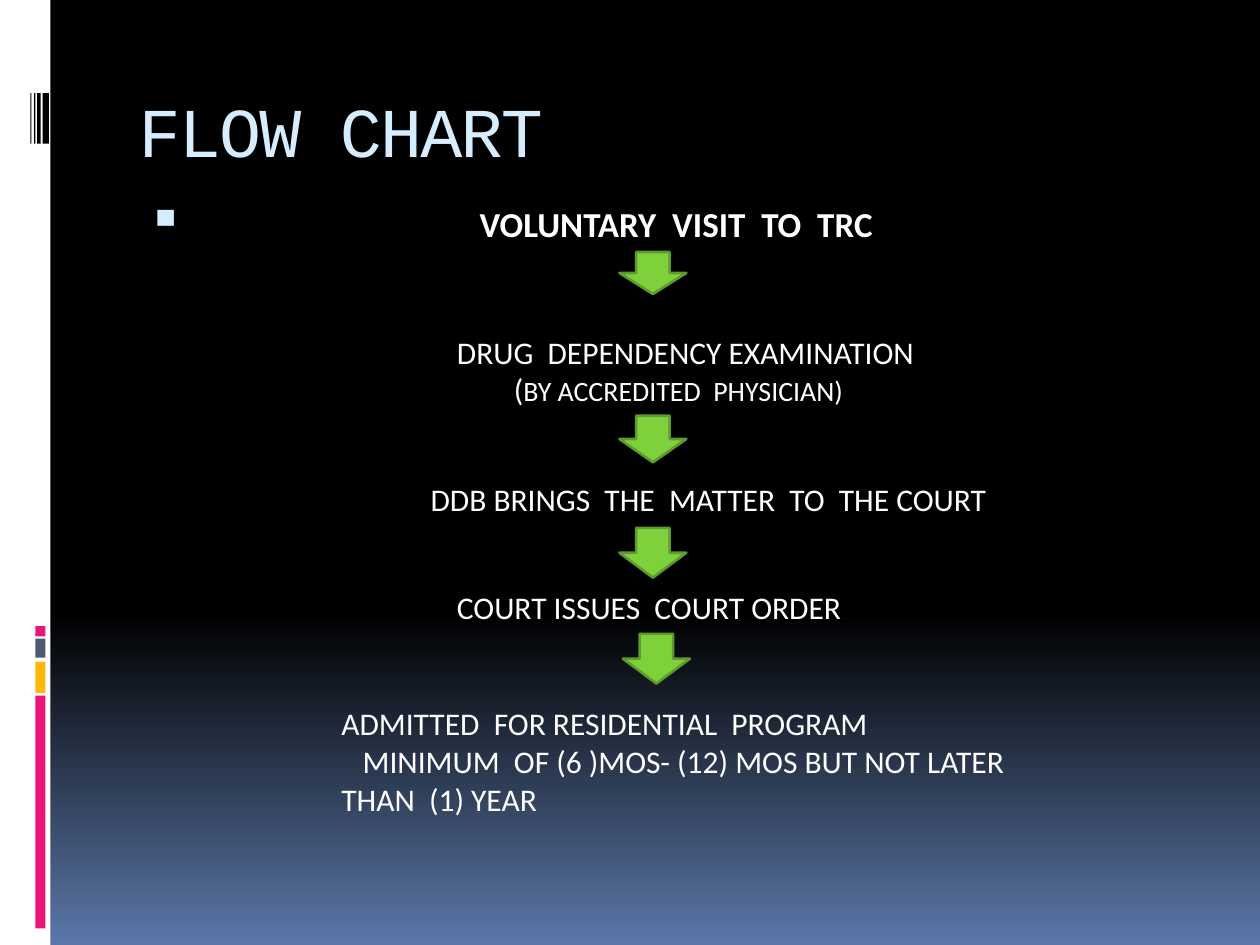
from lxml.etree import SubElement
from pptx import Presentation
from pptx.dml.color import RGBColor
from pptx.enum.shapes import MSO_SHAPE as Shape
from pptx.enum.text import MSO_ANCHOR as Anchor, PP_ALIGN as Align
from pptx.oxml.ns import qn
from pptx.util import Pt

THEME = {
    "white": "FFFFFF", "black": "000000", "sky": "D6ECFF", "blue": "5B77A8",
    "pink": "EA157A", "amber": "FEB80A", "slate": "4E5B6F",
    "green": "7FD13B", "dark_green": "5E9B2C",
    "title_font": "Courier New", "body_font": "Calibri",
    "title": 40, "lead": 20, "step": 18, "note": 16,
}
TITLE = "FLOW CHART"
LEAD = "VOLUNTARY  VISIT  TO  TRC"
STEPS = [
    ((254, 186.5, 300, 51), [
        (0, [("DRUG  DEPENDENCY EXAMINATION", "step")]),
        (32.5, [("(", "step"), ("BY ACCREDITED  PHYSICIAN)", "note")])]),
    ((239, 270.7, 353, 29), [
        (0, [("DDB BRINGS  THE  MATTER  TO  THE COURT", "step")])]),
    ((254, 332.6, 256, 29), [
        (0, [("COURT ISSUES  COURT ORDER", "step")])]),
    ((188, 398.9, 413, 73), [
        (0, [("ADMITTED  FOR RESIDENTIAL  PROGRAM", "step")]),
        (12.2, [("MINIMUM  OF (6 )MOS- (12) MOS BUT NOT LATER", "step")]),
        (0, [("THAN  (1) YEAR", "step")])]),
]
ARROWS = [(354, 144, 24), (354, 237.6, 26.6), (354, 301.7, 28.4), (356, 362.2, 28.4)]
ARROW_WIDTH = 38.2
SIDE_BAR = (0, 0, 28.8, 540)
COLOUR_BLOCKS = [("pink", 397.5, 133), ("amber", 378, 18), ("slate", 365, 10.8), ("pink", 357.8, 5.8)]
BARCODE = [(24.3, 3.6), (21.2, 2), (19.5, 0.8), (17.4, 0.6)]


def colour(name):
    return RGBColor.from_string(THEME[name])


def add_shape(slide, kind, area, fill, line=None):
    shape = slide.shapes.add_shape(kind, *map(Pt, area))
    shape.shadow.inherit = False
    shape.fill.solid()
    shape.fill.fore_color.rgb = colour(fill)
    if line:
        shape.line.color.rgb = colour(line)
        shape.line.width = Pt(1.5)
    else:
        shape.line.fill.background()
    return shape


def write(para, text, size="step", font="body_font", ink="white", bold=False):
    span = para.add_run()
    span.text = text
    span.font.size = Pt(THEME[size])
    span.font.name = THEME[font]
    span.font.color.rgb = colour(ink)
    span.font.bold = bold
    return span


def add_box(slide, area):
    box = slide.shapes.add_textbox(*map(Pt, area))
    box.text_frame.word_wrap = True
    return box.text_frame


def set_bullet(para, mark, ink, percent, margin, hanging):
    props = para._p.get_or_add_pPr()
    props.set("marL", str(Pt(margin)))
    props.set("indent", str(-Pt(hanging)))
    SubElement(SubElement(props, qn("a:buClr")), qn("a:srgbClr"), val=THEME[ink])
    SubElement(props, qn("a:buSzPct"), val=str(percent * 1000))
    SubElement(props, qn("a:buChar"), char=mark)


def paint_backdrop(slide):
    fill = slide.background.fill
    fill.gradient()
    fill.gradient_angle = 270
    for stop, (name, position) in zip(fill.gradient_stops, [("black", 0.65), ("blue", 1)]):
        stop.color.rgb = colour(name)
        stop.position = position
    add_shape(slide, Shape.RECTANGLE, SIDE_BAR, "white")
    for name, top, height in COLOUR_BLOCKS:
        add_shape(slide, Shape.RECTANGLE, (20.2, top, 5.8, height), name)
    for left, width in BARCODE:
        add_shape(slide, Shape.RECTANGLE, (left, 53.3, width, 28.8), "black")


def place_title(slide):
    title = slide.shapes.title
    title.left, title.top, title.width, title.height = map(Pt, (72, 40.3, 612, 72))
    frame = title.text_frame
    frame.vertical_anchor = Anchor.MIDDLE
    frame.margin_bottom = Pt(8.6)
    para = frame.paragraphs[0]
    para.alignment = Align.LEFT
    span = write(para, TITLE, size="title", font="title_font", ink="sky")
    span.font._element.set("spc", "-100")


def place_flow(slide):
    frame = add_box(slide, (72, 102.2, 612, 360))
    frame.margin_top = Pt(13.6)
    para = frame.paragraphs[0]
    set_bullet(para, "▪", "sky", 142, margin=195, hanging=190)
    write(para, LEAD, size="lead", bold=True)
    for arrow, (area, lines) in zip(ARROWS, STEPS):
        left, top, height = arrow
        add_shape(slide, Shape.DOWN_ARROW, (left, top, ARROW_WIDTH, height), "green", "dark_green")
        frame = add_box(slide, area)
        for number, (indent, spans) in enumerate(lines):
            para = frame.add_paragraph() if number else frame.paragraphs[0]
            para._p.get_or_add_pPr().set("marL", str(Pt(indent)))
            for text, size in spans:
                write(para, text, size=size)


def main():
    deck = Presentation()
    deck.slide_width, deck.slide_height = Pt(720), Pt(540)
    slide = deck.slides.add_slide(deck.slide_layouts[5])
    paint_backdrop(slide)
    place_title(slide)
    place_flow(slide)
    deck.save("out.pptx")


if __name__ == "__main__":
    main()
